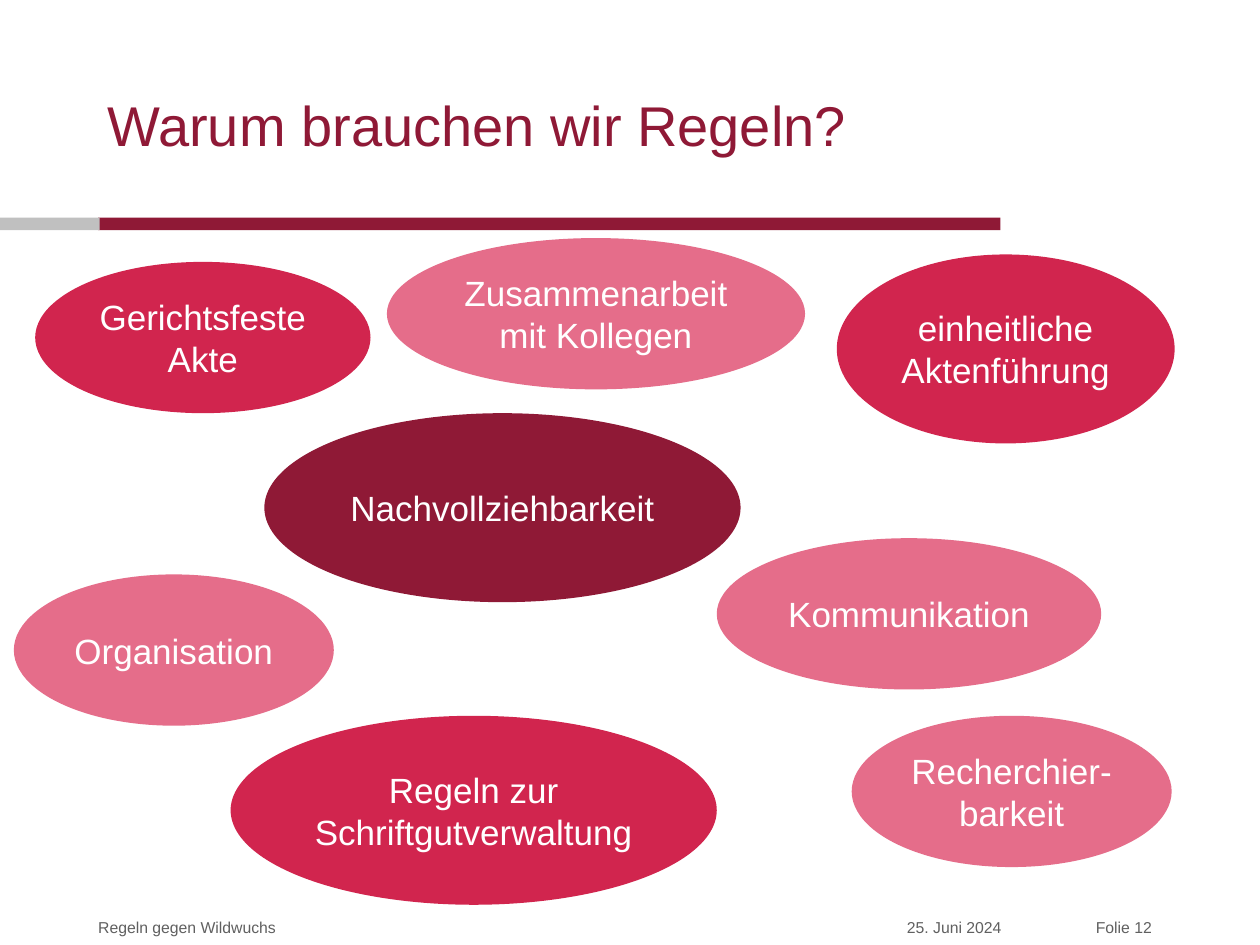
from pptx import Presentation
from pptx.dml.color import RGBColor
from pptx.enum import shapes, text
from pptx.util import Cm, Pt

COLORS = {
    "dark": "8F1936",
    "red": "D1254E",
    "pink": "E56D8A",
    "silver": "C0C0C0",
    "gray": "606060",
    "white": "FFFFFF",
}


def add_filled(slide, kind, box, color):
    shape = slide.shapes.add_shape(kind, *map(Cm, box))
    shape.shadow.inherit = False
    shape.fill.solid()
    shape.fill.fore_color.rgb = RGBColor.from_string(COLORS[color])
    shape.line.fill.background()
    return shape


def write(shape, wording, size, color, alignment):
    frame = shape.text_frame
    frame.text = wording
    frame.word_wrap = True
    frame.vertical_anchor = text.MSO_ANCHOR.MIDDLE
    paragraph = frame.paragraphs[0]
    paragraph.alignment = alignment
    paragraph.font.name = "Arial"
    paragraph.font.size = Pt(size)
    paragraph.font.color.rgb = RGBColor.from_string(COLORS[color])


presentation = Presentation()
presentation.slide_width = Cm(25.4)
presentation.slide_height = Cm(19.05)
slide = presentation.slides.add_slide(presentation.slide_layouts.get_by_name("Title Only"))

add_filled(slide, shapes.MSO_SHAPE.RECTANGLE, (1.98, 4.39, 18.19, 0.25), "dark")
add_filled(slide, shapes.MSO_SHAPE.RECTANGLE, (0, 4.39, 2.01, 0.25), "silver")

footers = [
    ("25. Juni 2024", 16.69, 3.5, text.PP_ALIGN.RIGHT),
    ("Folie 12", 20.17, 3.05, text.PP_ALIGN.RIGHT),
    ("Regeln gegen Wildwuchs", 1.98, 14, text.PP_ALIGN.LEFT),
]
for wording, left, width, alignment in footers:
    footer = slide.shapes.add_textbox(Cm(left), Cm(18.34), Cm(width), Cm(0.71))
    frame = footer.text_frame
    frame.margin_left = frame.margin_right = frame.margin_top = frame.margin_bottom = 0
    write(footer, wording, 9, "gray", alignment)

title = slide.shapes.title
title.left, title.top, title.width, title.height = map(Cm, (1.91, 1.22, 16.21, 2.57))
write(title, "Warum brauchen wir Regeln?", 32, "dark", text.PP_ALIGN.LEFT)

LARGE, SMALL = 3.81, 3.05
reasons = [
    ("Nachvollziehbarkeit", 5.33, 8.33, 9.6, LARGE, "dark"),
    ("einheitliche Aktenführung", 16.87, 5.13, 6.81, LARGE, "red"),
    ("Regeln zur Schriftgutverwaltung", 4.65, 14.43, 9.8, LARGE, "red"),
    ("Gerichtsfeste Akte", 0.71, 5.28, 6.76, SMALL, "red"),
    ("Kommunikation", 14.45, 10.85, 7.75, SMALL, "pink"),
    ("Organisation", 0.28, 11.58, 6.45, SMALL, "pink"),
    ("Zusammenarbeit mit Kollegen", 7.8, 4.8, 8.43, SMALL, "pink"),
    ("Recherchier-barkeit", 17.17, 14.43, 6.45, SMALL, "pink"),
]
for wording, *box, color in reasons:
    ellipse = add_filled(slide, shapes.MSO_SHAPE.OVAL, box, color)
    write(ellipse, wording, 20, "white", text.PP_ALIGN.CENTER)

presentation.save("out.pptx")
